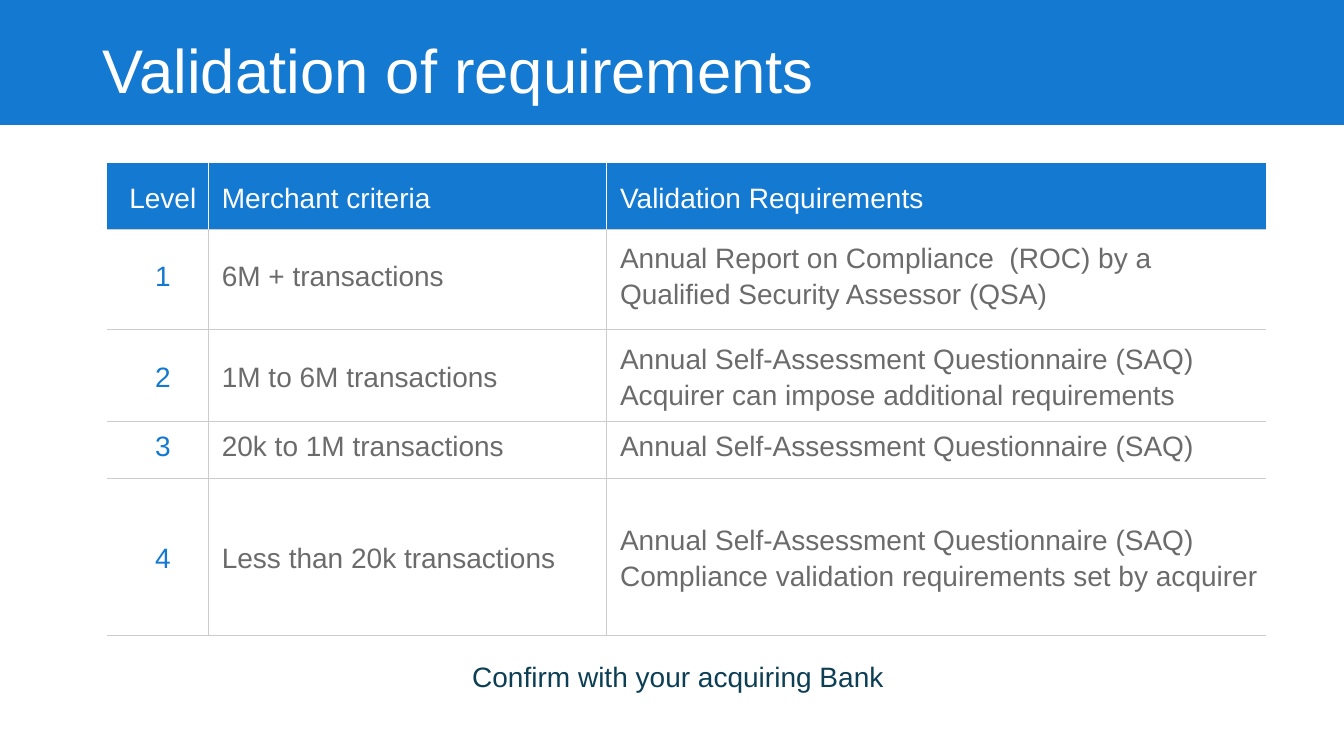
"""Build the slide on validation requirements per merchant level."""
from lxml.etree import SubElement
from pptx import Presentation
from pptx.dml.color import RGBColor
from pptx.enum.shapes import MSO_SHAPE
from pptx.enum.text import MSO_ANCHOR, PP_ALIGN
from pptx.oxml.ns import qn
from pptx.util import Inches, Pt

BLUE = RGBColor(0x13, 0x79, 0xD1)
WHITE = RGBColor(0xFF, 0xFF, 0xFF)
GREY = RGBColor(0x6B, 0x6B, 0x6B)
RULE = RGBColor(0xCC, 0xCC, 0xCC)
NAVY = RGBColor(0x0C, 0x3E, 0x54)
FONT = "Arial"

COLUMN_WIDTHS = (1.01, 3.95, 6.54)
ROW_HEIGHTS = (0.66, 0.99, 0.66, 0.56, 1.56)
FLUSH_TOP_ROWS = (1, 3)
REQUIREMENTS = (
    ("Level", "Merchant criteria", "Validation Requirements"),
    ("1", "6M + transactions",
     "Annual Report on Compliance  (ROC) by a Qualified Security Assessor (QSA)"),
    ("2", "1M to 6M transactions",
     "Annual Self-Assessment Questionnaire (SAQ)\n"
     "Acquirer can impose additional requirements"),
    ("3", "20k to 1M transactions", "Annual Self-Assessment Questionnaire (SAQ)"),
    ("4", "Less than 20k transactions",
     "Annual Self-Assessment Questionnaire (SAQ)\n"
     "Compliance validation requirements set by acquirer"),
)


def format_paragraph(paragraph, size, color, align, spacing):
    """Set the alignment, line spacing and font of a paragraph."""
    paragraph.alignment = align
    paragraph.line_spacing = spacing
    for run in paragraph.runs:
        run.font.name = FONT
        run.font.size = Pt(size)
        run.font.bold = False
        run.font.color.rgb = color


def set_indent(paragraph, left, first):
    """Set the left margin and first-line indent of a paragraph."""
    properties = paragraph._p.get_or_add_pPr()
    properties.set("marL", str(Inches(left)))
    properties.set("indent", str(Inches(first)))


def set_borders(cell, **colors):
    """Draw the given cell sides and clear the others."""
    properties = cell._tc.get_or_add_tcPr()
    for position, side in enumerate(("lnL", "lnR", "lnT", "lnB")):
        line = SubElement(properties, qn(f"a:{side}"), w=str(Pt(0.75)))
        properties.insert(position, line)
        if side in colors:
            fill = SubElement(line, qn("a:solidFill"))
            SubElement(fill, qn("a:srgbClr"), val=str(colors[side]))
        else:
            SubElement(line, qn("a:noFill"))


def fill_cell(cell, text, row, column):
    """Write and style one table cell by its row and column."""
    header = row == 0
    cell.text_frame.text = text
    cell.vertical_anchor = MSO_ANCHOR.MIDDLE
    cell.margin_left, cell.margin_right = Inches(0.13), Inches(0.03)
    cell.margin_top = Inches(0 if row in FLUSH_TOP_ROWS else 0.1)
    cell.margin_bottom = Inches(0.1)

    color = WHITE if header else BLUE if column == 0 else GREY
    align = PP_ALIGN.CENTER if column == 0 else PP_ALIGN.LEFT
    for paragraph in cell.text_frame.paragraphs:
        if (row, column) != (1, 2):
            set_indent(paragraph, 0.35, -0.35)
        format_paragraph(paragraph, 20, color, align, 1.15)

    if header:
        cell.fill.solid()
        cell.fill.fore_color.rgb = BLUE
    else:
        cell.fill.background()
    sides = {"lnB": RULE}
    if not header:
        sides["lnT"] = RULE
    if column > 0:
        sides["lnL"] = WHITE if header else RULE
    if column < len(COLUMN_WIDTHS) - 1:
        sides["lnR"] = WHITE if header else RULE
    set_borders(cell, **sides)


def add_title(slide, text):
    """Place the title on a blue band across the top."""
    title = slide.shapes.title
    title.left, title.top = Inches(0.92), Inches(0.29)
    title.width, title.height = Inches(11.5), Inches(0.87)
    title.text_frame.text = text
    title.text_frame.vertical_anchor = MSO_ANCHOR.MIDDLE
    format_paragraph(title.text_frame.paragraphs[0], 44, WHITE, PP_ALIGN.LEFT, 0.9)

    band = slide.shapes.add_shape(
        MSO_SHAPE.RECTANGLE, 0, 0, Inches(13.33), Inches(1.24))
    band.shadow.inherit = False
    band.fill.solid()
    band.fill.fore_color.rgb = BLUE
    band.line.fill.background()
    title.element.addprevious(band.element)


def add_requirements(slide):
    """Add the table of merchant levels."""
    table = slide.shapes.add_table(
        len(ROW_HEIGHTS), len(COLUMN_WIDTHS), Inches(1.06), Inches(1.62),
        Inches(sum(COLUMN_WIDTHS)), Inches(sum(ROW_HEIGHTS))).table
    table.horz_banding = False
    for column, width in zip(table.columns, COLUMN_WIDTHS):
        column.width = Inches(width)
    for row, height in zip(table.rows, ROW_HEIGHTS):
        row.height = Inches(height)
    for row, texts in enumerate(REQUIREMENTS):
        for column, text in enumerate(texts):
            fill_cell(table.cell(row, column), text, row, column)


def add_advice(slide, text):
    """Add the centred advice below the table."""
    frame = slide.shapes.add_textbox(
        0, Inches(6.58), Inches(13.33), Inches(0.44)).text_frame
    frame.word_wrap = True
    frame.margin_left = frame.margin_right = 0
    frame.margin_top = frame.margin_bottom = 0
    frame.text = text
    set_indent(frame.paragraphs[0], 0.12, 0)
    format_paragraph(frame.paragraphs[0], 20, NAVY, PP_ALIGN.CENTER, 0.9)


def main():
    """Build and save the presentation."""
    presentation = Presentation()
    presentation.slide_width = Inches(13.33)
    presentation.slide_height = Inches(7.5)
    slide = presentation.slides.add_slide(presentation.slide_layouts[5])
    add_title(slide, "Validation of requirements")
    add_requirements(slide)
    add_advice(slide, "Confirm with your acquiring Bank")
    presentation.save("out.pptx")


if __name__ == "__main__":
    main()
